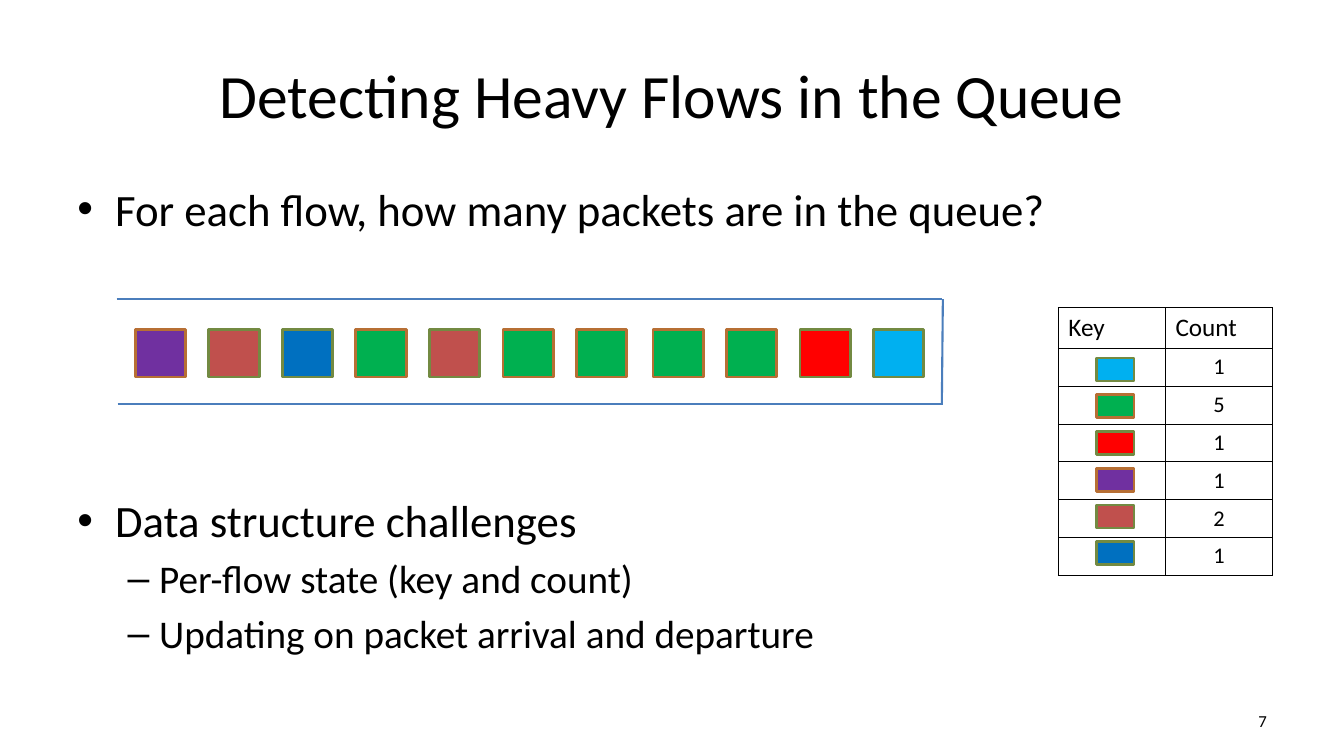
from collections import Counter
from dataclasses import dataclass

from lxml.etree import SubElement
from pptx import Presentation
from pptx.dml.color import RGBColor
from pptx.enum.shapes import MSO_CONNECTOR, MSO_SHAPE
from pptx.enum.text import MSO_ANCHOR, MSO_AUTO_SIZE, PP_ALIGN
from pptx.oxml.ns import qn
from pptx.util import Emu, Pt

PX = 9525  # 96 px to the inch


@dataclass(frozen=True)
class Theme:
    font: str = "Calibri"
    text: str = "000000"
    border: str = "000000"
    queue_line: str = "4B7EBC"
    title_size: int = 44
    bullet_size: int = 32
    sub_bullet_size: int = 28
    header_size: int = 18
    count_size: int = 16
    number_size: int = 12


THEME = Theme()

# Flow name: fill and outline
FLOWS = {
    "cyan": ("00B0F0", "738A42"),
    "green": ("00B050", "B76F34"),
    "red": ("FF0000", "738A42"),
    "purple": ("7030A0", "B76F34"),
    "rust": ("C0504D", "738A42"),
    "blue": ("0070C0", "738A42"),
}
QUEUE = ["purple", "rust", "blue", "green", "rust", "green",
         "green", "green", "green", "red", "cyan"]
BULLETS = [
    (0, "For each flow, how many packets are in the queue?"),
    (0, "Data structure challenges"),
    (1, "Per-flow state (key and count)"),
    (1, "Updating on packet arrival and departure"),
]


def px(*lengths):
    return [Emu(length * PX) for length in lengths]


def style(para, size, align=None):
    para.alignment = align
    for span in para.runs:
        span.font.name = THEME.font
        span.font.size = Pt(size)
        span.font.color.rgb = RGBColor.from_string(THEME.text)


def place(shape, left, top, width, height):
    shape.left, shape.top, shape.width, shape.height = px(left, top, width, height)


def fill_title(title, text):
    place(title, 64, 29, 1152, 120)
    title.text_frame.text = text
    title.text_frame.vertical_anchor = MSO_ANCHOR.MIDDLE
    style(title.text_frame.paragraphs[0], THEME.title_size, PP_ALIGN.CENTER)


def fill_bullets(body, bullets):
    place(body, 64, 168, 1152, 499)
    frame = body.text_frame
    frame.text = "\n".join(text for _, text in bullets)
    frame.auto_size = MSO_AUTO_SIZE.NONE
    for para, (level, _) in zip(frame.paragraphs, bullets):
        para.level = level
        style(para, THEME.sub_bullet_size if level else THEME.bullet_size)
    # Room for the queue drawing
    frame.paragraphs[1].space_before = Pt(184)


def add_packet(shapes, flow, left, top, width, height):
    fill, outline = FLOWS[flow]
    packet = shapes.add_shape(MSO_SHAPE.RECTANGLE, *px(left, top, width, height))
    packet.shadow.inherit = False
    packet.fill.solid()
    packet.fill.fore_color.rgb = RGBColor.from_string(fill)
    packet.line.color.rgb = RGBColor.from_string(outline)
    packet.line.width = Pt(2)


def add_line(page, *ends):
    line = page.shapes.add_connector(MSO_CONNECTOR.STRAIGHT, *px(*ends))
    line.line.color.rgb = RGBColor.from_string(THEME.queue_line)
    line.line.width = Pt(1.5)
    SubElement(line._element.spPr, qn("a:effectLst"))


def add_queue(page):
    for ends in [(111, 285, 897, 285), (112, 385, 898, 385), (897, 385, 898, 285)]:
        add_line(page, *ends)
    for i, flow in enumerate(QUEUE):
        gap = 3 if i >= 7 else 0  # the last four packets stand slightly apart
        add_packet(page.shapes, flow, 129 + 70 * i + gap, 314, 48, 45)


def add_borders(cell):
    properties = cell._tc.get_or_add_tcPr()
    for i, side in enumerate(("a:lnL", "a:lnR", "a:lnT", "a:lnB")):
        line = properties.makeelement(qn(side), {"w": str(Pt(1))})
        solid = SubElement(line, qn("a:solidFill"))
        SubElement(solid, qn("a:srgbClr"), val=THEME.border)
        properties.insert(i, line)


def fill_cell(cell, text, size, align):
    cell.fill.background()
    add_borders(cell)
    para = cell.text_frame.paragraphs[0]
    if text:
        para.text = text
        style(para, size, align)
    else:  # keeps an empty cell as low as its neighbour
        SubElement(para._p, qn("a:endParaRPr"), sz=str(size * 100))


def add_count_table(page):
    counts = Counter(QUEUE)
    rows = [("Key", "Count")] + [("", str(counts[flow])) for flow in FLOWS]
    frame = page.shapes.add_table(len(rows), 2, *px(1008, 293, 204, 255))
    table = frame.table
    table.first_row = table.horz_banding = False
    for r, row in enumerate(rows):
        height, size, align = (
            (36, THEME.count_size, PP_ALIGN.CENTER) if r
            else (39, THEME.header_size, PP_ALIGN.LEFT))
        table.rows[r].height = Emu(height * PX)
        for c, text in enumerate(row):
            fill_cell(table.cell(r, c), text, size, align)
    # Key colours
    keys = page.shapes.add_group_shape()
    for i, flow in enumerate(FLOWS):
        add_packet(keys.shapes, flow, 1044, 341 + 35 * i, 36, 22)


def add_page_number(page, number):
    box = page.shapes.add_textbox(*px(918, 667, 298, 38))
    box.text_frame.word_wrap = True
    box.text_frame.vertical_anchor = MSO_ANCHOR.MIDDLE
    box.text_frame.text = number
    style(box.text_frame.paragraphs[0], THEME.number_size, PP_ALIGN.RIGHT)


def main():
    deck = Presentation()
    deck.slide_width, deck.slide_height = px(1280, 720)
    page = deck.slides.add_slide(deck.slide_layouts[1])
    fill_title(page.shapes.title, "Detecting Heavy Flows in the Queue")
    fill_bullets(page.placeholders[1], BULLETS)
    add_queue(page)
    add_count_table(page)
    add_page_number(page, "7")
    deck.save("out.pptx")


if __name__ == "__main__":
    main()
